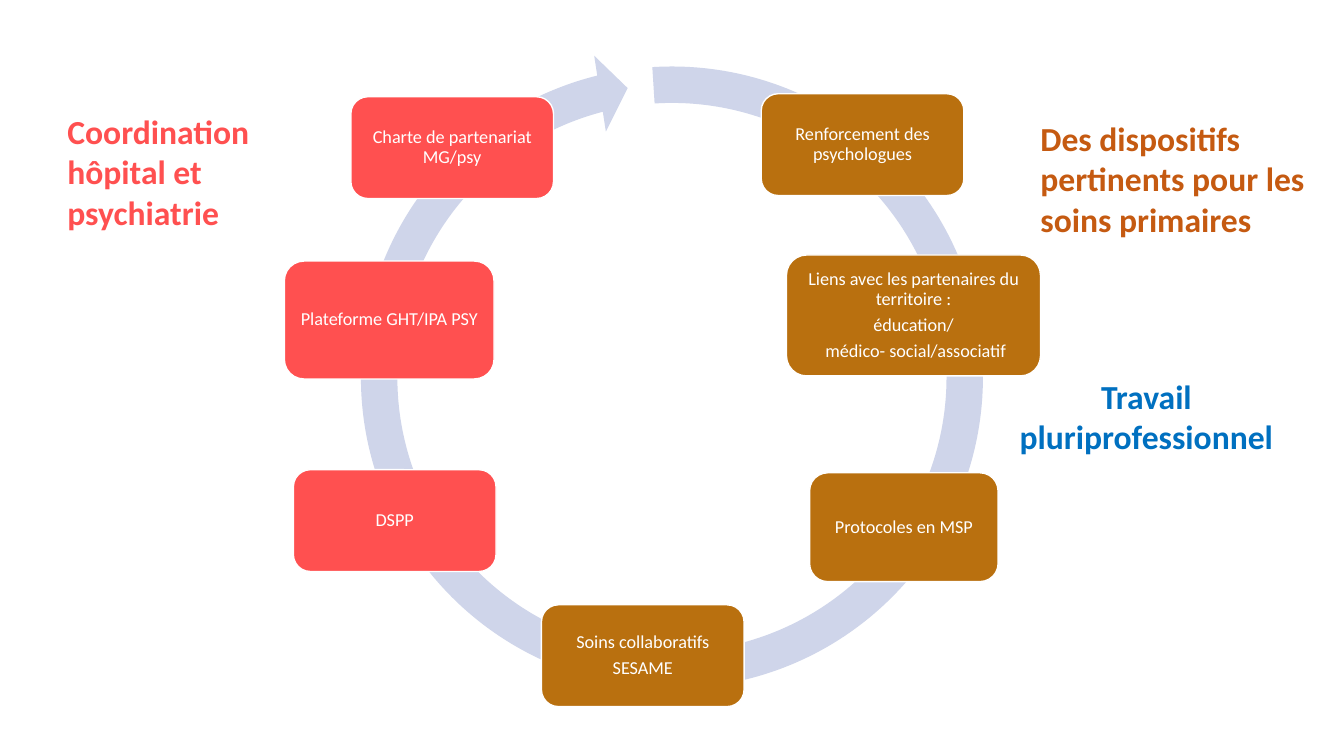
from dataclasses import dataclass

from pptx import Presentation
from pptx.dml.color import RGBColor as RGB
from pptx.enum.shapes import MSO_SHAPE as Kind
from pptx.enum.text import MSO_ANCHOR as Anchor, MSO_AUTO_SIZE as Fit, PP_ALIGN as Align
from pptx.util import Inches, Pt


@dataclass(frozen=True)
class Theme:
    font: str = "Calibri"
    ring: RGB = RGB.from_string("CFD5EA")
    white: RGB = RGB.from_string("FFFFFF")
    ochre: RGB = RGB.from_string("B9700F")
    coral: RGB = RGB.from_string("FF5050")
    rust: RGB = RGB.from_string("C55A11")
    blue: RGB = RGB.from_string("0070C0")
    step: Pt = Pt(13)
    title: Pt = Pt(24)
    gap: Pt = Pt(4.55)


THEME = Theme()
SIZE = (2.01, 1.01)

# Steps run clockwise from the top: left, top, size, colour, lines
STEPS = [
    (7.55, 0.93, SIZE, THEME.ochre, ["Renforcement des psychologues"]),
    (7.8, 2.53, (2.52, 1.2), THEME.ochre,
     ["Liens avec les partenaires du territoire :", "éducation/",
      " médico- social/associatif"]),
    (8.03, 4.69, (1.87, 1.08), THEME.ochre, ["Protocoles en MSP"]),
    (5.37, 6, SIZE, THEME.ochre, ["Soins collaboratifs", "SESAME"]),
    (2.91, 4.66, SIZE, THEME.coral, ["DSPP"]),
    (2.82, 2.59, (2.08, 1.17), THEME.coral, ["Plateforme GHT/IPA PSY"]),
    (3.48, 0.96, SIZE, THEME.coral, ["Charte de partenariat MG/psy"]),
]

# Themes around the ring: box, colour, alignment, text
LABELS = [
    ((10.22, 1.12, 3.12, 1.31), THEME.rust, Align.LEFT,
     "Des dispositifs pertinents pour les soins primaires"),
    ((9.73, 3.68, 3.28, 0.91), THEME.blue, Align.CENTER,
     "Travail pluriprofessionnel"),
    ((0.57, 1.05, 2.43, 1.31), THEME.coral, Align.LEFT,
     "Coordination hôpital et psychiatrie"),
]


def style(para, size, color, align, bold=False):
    para.alignment = align
    font = para.font
    font.name, font.size, font.bold = THEME.font, size, bold
    font.color.rgb = color


def add_solid(slide, kind, box, color):
    shape = slide.shapes.add_shape(kind, *map(Inches, box))
    shape.shadow.inherit = False
    shape.fill.solid()
    shape.fill.fore_color.rgb = color
    return shape


def add_ring(slide, box):
    ring = add_solid(slide, Kind.CIRCULAR_ARROW, box, THEME.ring)
    ring.line.fill.background()
    ring.rotation = 14.1
    # Band width, head angle, end angle, start angle, head width
    for i, value in enumerate((0.055, 3.307, 145.009, 151.37, 0.058)):
        ring.adjustments[i] = value


def add_step(slide, box, color, lines):
    card = add_solid(slide, Kind.ROUNDED_RECTANGLE, box, color)
    card.line.color.rgb = THEME.white
    card.line.width = Pt(1)
    frame = card.text_frame
    frame.word_wrap = True
    frame.vertical_anchor = Anchor.MIDDLE
    frame.margin_left = frame.margin_right = Inches(0.1)
    frame.margin_top = frame.margin_bottom = Inches(0.1)
    frame.text = "\n".join(lines)
    for para in frame.paragraphs:
        style(para, THEME.step, THEME.white, Align.CENTER)
        para.line_spacing = 0.9
        para.space_after = THEME.gap


def add_label(slide, box, color, align, text):
    frame = slide.shapes.add_textbox(*map(Inches, box)).text_frame
    frame.word_wrap = True
    frame.auto_size = Fit.SHAPE_TO_FIT_TEXT
    frame.text = text
    style(frame.paragraphs[0], THEME.title, color, align, bold=True)


def add_cycle(slide, box):
    """Draw the ring in the box, with its steps on top."""
    add_ring(slide, box)
    for left, top, size, color, lines in STEPS:
        add_step(slide, (left, top, *size), color, lines)


def main():
    deck = Presentation()
    deck.slide_width, deck.slide_height = Inches(13.33), Inches(7.5)
    slide = deck.slides.add_slide(deck.slide_layouts[6])
    add_cycle(slide, (3.38, 0.46, 6.57, 6.57))
    for label in LABELS:
        add_label(slide, *label)
    deck.save("out.pptx")


if __name__ == "__main__":
    main()
